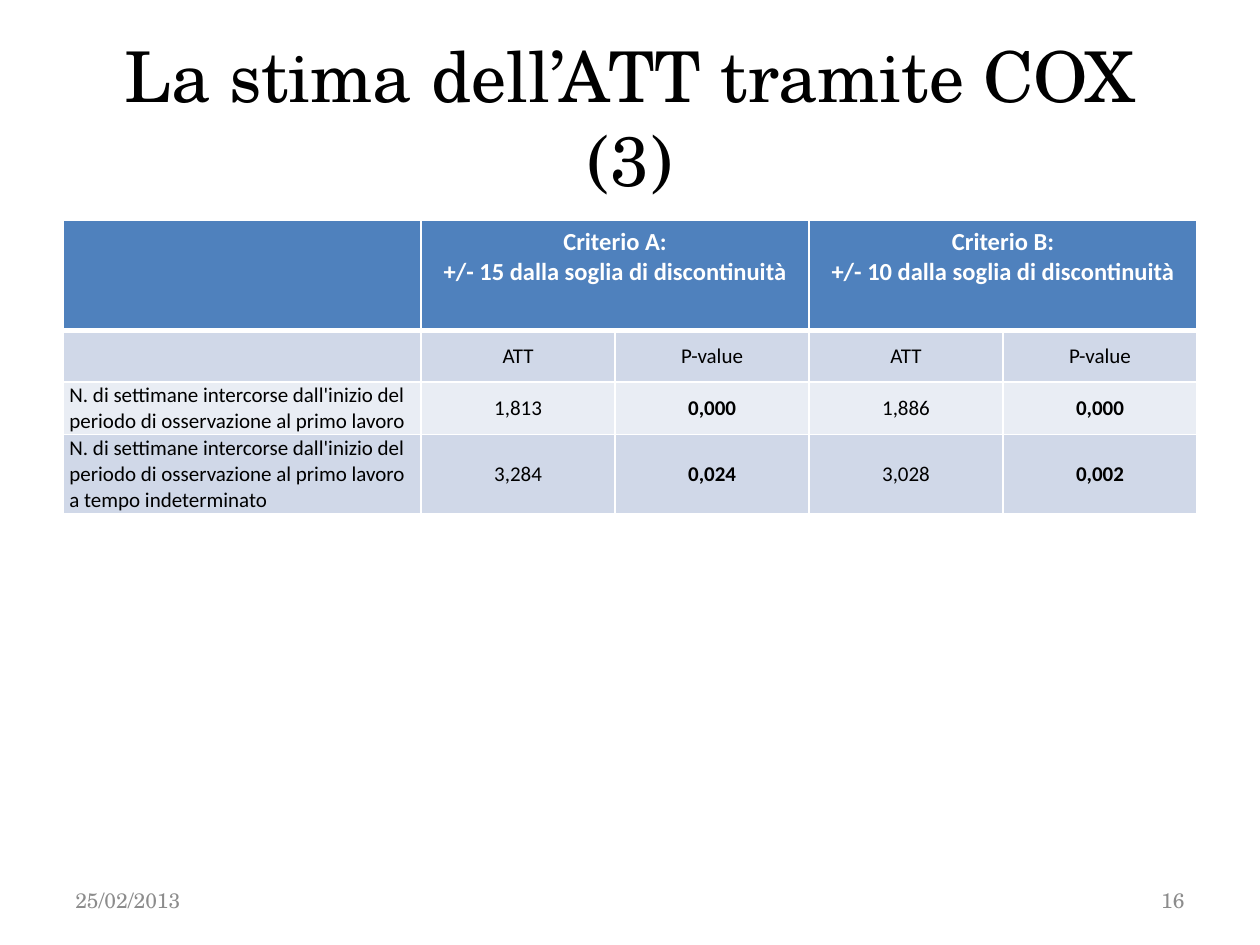
from lxml.etree import SubElement
from pptx import Presentation
from pptx.dml.color import RGBColor
from pptx.enum.text import MSO_ANCHOR as Anchor, MSO_AUTO_SIZE as AutoSize, PP_ALIGN as Align
from pptx.oxml.ns import qn
from pptx.util import Cm, Pt

COLORS = {"header": "4F81BD", "dark": "D0D8E8", "light": "E9EDF4",
          "white": "FFFFFF", "black": "000000", "footer": "8C8C8C"}
SERIF, SANS = "TeX Gyre Schola", "Calibri"
HEADERS = ["", "Criterio A:\n+/- 15 dalla soglia di discontinuità", "",
           "Criterio B:\n+/- 10 dalla soglia di discontinuità", ""]
WEEKS = "N. di settimane intercorse dall'inizio del periodo di osservazione al primo lavoro"
ROWS = [
    HEADERS,
    ["", "ATT", "P-value", "ATT", "P-value"],
    [WEEKS, "1,813", "0,000", "1,886", "0,000"],
    [WEEKS + " a tempo indeterminato", "3,284", "0,024", "3,028", "0,002"],
]
COLUMN_WIDTHS = [7.22, 3.91, 3.91, 3.91, 3.91]
ROW_HEIGHTS = [2.21, 1.04, 1.06, 1.59]


def rgb(name):
    """Return the named colour."""
    return RGBColor.from_string(COLORS[name])


def style_text(frame, font, size, color, align, bold=False):
    """Format every paragraph of a text frame."""
    for para in frame.paragraphs:
        para.alignment = align
        para.font.name = font
        para.font.size = Pt(size)
        para.font.bold = bold
        para.font.color.rgb = rgb(color)


def add_border(cell, side, width):
    """Draw a white line on one side of a cell."""
    properties = cell._tc.get_or_add_tcPr()
    line = SubElement(properties, qn(f"a:ln{side}"), w=str(Pt(width)))
    fill = SubElement(line, qn("a:solidFill"))
    SubElement(fill, qn("a:srgbClr"), val=COLORS["white"])


def style_cell(cell, row, column):
    """Set borders, fill and text format by position in the table."""
    for side in "LRTB":
        thick = (row, side) in ((0, "B"), (1, "T"))
        add_border(cell, side, 3 if thick else 1)
    cell.fill.solid()
    if row == 0:
        cell.fill.fore_color.rgb = rgb("header")
        style_text(cell.text_frame, SANS, 14, "white", Align.CENTER, True)
        return
    cell.fill.fore_color.rgb = rgb("dark" if row % 2 else "light")
    cell.vertical_anchor = Anchor.MIDDLE
    cell.margin_left = cell.margin_right = Cm(0.13)
    cell.margin_top = cell.margin_bottom = 0
    is_p_value = row > 1 and column in (2, 4)
    style_text(cell.text_frame, SANS, 12, "black",
               Align.CENTER if column else Align.LEFT, is_p_value)
    for para in cell.text_frame.paragraphs:
        para.line_spacing = Pt(15)


def place_title(page, left, top, width, height):
    """Place and format the slide title."""
    title = page.shapes.title
    title.left, title.top, title.width, title.height = map(Cm, (left, top, width, height))
    frame = title.text_frame
    frame.text = "La stima dell’ATT tramite COX (3)"
    frame.word_wrap = True
    frame.auto_size = AutoSize.NONE
    frame.vertical_anchor = Anchor.MIDDLE
    style_text(frame, SERIF, 40, "black", Align.CENTER)


def add_estimates(page, left, top, width, height):
    """Add the table of estimates for both criteria."""
    table = page.shapes.add_table(len(ROWS), len(COLUMN_WIDTHS), Cm(left), Cm(top),
                                  Cm(width), Cm(height)).table
    for column, size in zip(table.columns, COLUMN_WIDTHS):
        column.width = Cm(size)
    for row, size in zip(table.rows, ROW_HEIGHTS):
        row.height = Cm(size)
    for first in (1, 3):
        table.cell(0, first).merge(table.cell(0, first + 1))
    for i, texts in enumerate(ROWS):
        for j, text in enumerate(texts):
            cell = table.cell(i, j)
            cell.text = text
            style_cell(cell, i, j)


def add_footer(page, left, top, width, height):
    """Add the date at the left end and the page number at the right end."""
    part = 5.93
    for x, text, align in ((left, "25/02/2013", Align.LEFT),
                           (left + width - part, "16", Align.RIGHT)):
        box = page.shapes.add_textbox(Cm(x), Cm(top), Cm(part), Cm(height))
        frame = box.text_frame
        frame.text = text
        frame.word_wrap = True
        frame.vertical_anchor = Anchor.MIDDLE
        style_text(frame, SERIF, 12, "footer", align)


def main():
    """Build the slide and save the deck."""
    deck = Presentation()
    deck.slide_width, deck.slide_height = Cm(25.4), Cm(19.05)
    page = deck.slides.add_slide(deck.slide_layouts[5])
    left, width = 1.27, 22.86
    place_title(page, left, 0.76, width, 3.18)
    add_estimates(page, left, 4.45, sum(COLUMN_WIDTHS), sum(ROW_HEIGHTS))
    add_footer(page, left, 17.65, width, 1.01)
    deck.save("out.pptx")


if __name__ == "__main__":
    main()
